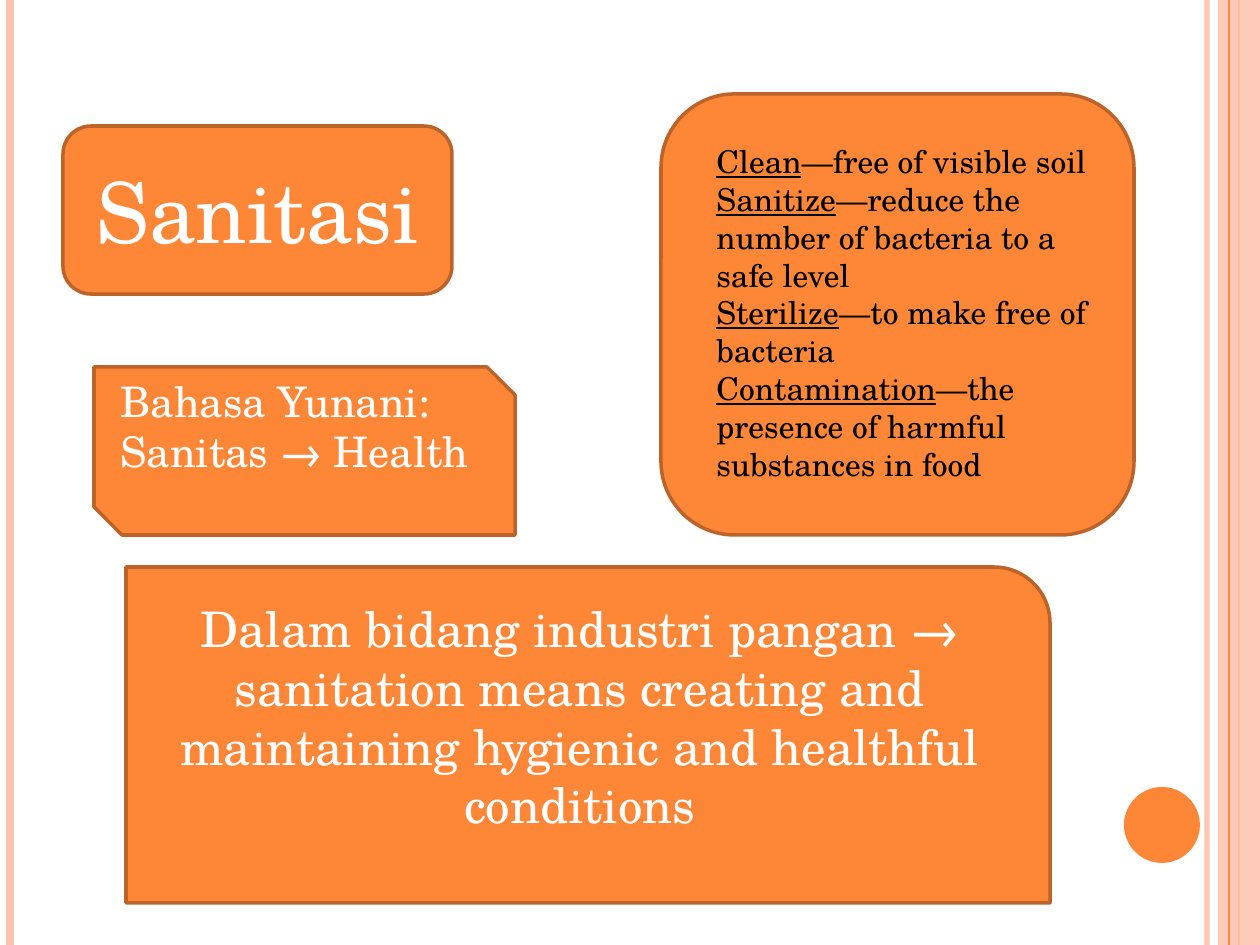
"""Build the sanitation definitions slide."""
from dataclasses import dataclass

from lxml.etree import SubElement
from pptx import Presentation
from pptx.dml.color import RGBColor
from pptx.enum.shapes import MSO_CONNECTOR, MSO_SHAPE as Preset
from pptx.enum.text import MSO_ANCHOR as Anchor, MSO_AUTO_SIZE, PP_ALIGN as Align
from pptx.oxml.ns import qn
from pptx.util import Emu, Pt

EMU_PER_PX = 914400 / 126
SLIDE_W, SLIDE_H = 1260, 945
FONT = "TeX Gyre Schola"
ORANGE, PEACH, BROWN = "FE8637", "FEC3AE", "BC6329"
WHITE, BLACK = "FFFFFF", "000000"


@dataclass(frozen=True)
class Box:
    left: int
    top: int
    width: int
    height: int


@dataclass(frozen=True)
class Stripe:
    x: int
    color: str
    weight: float
    opacity: int = 100


@dataclass(frozen=True)
class Card:
    preset: Preset
    box: Box
    text: str = ""
    size: int = 18
    align: Align = Align.CENTER
    bottom_inset: int = 6


LEFT_STRIPES = [Stripe(1207, PEACH, 3, 93), Stripe(10, PEACH, 4.5), Stripe(1239, ORANGE, 1.5)]
BAND_STRIPE = Stripe(1229, ORANGE, 0.75)
BAND = Box(1218, 0, 42, SLIDE_H)
DOT = Box(1124, 787, 76, 76)

CARDS = [
    Card(Preset.FLOWCHART_ALTERNATE_PROCESS, Box(63, 126, 389, 168), "Sanitasi", 48),
    Card(Preset.SNIP_2_DIAG_RECTANGLE, Box(94, 367, 421, 168),
         "Bahasa Yunani: Sanitas → Health", 24, Align.LEFT, 57),
    Card(Preset.ROUND_1_RECTANGLE, Box(126, 567, 924, 336),
         "Dalam bidang industri pangan → sanitation means creating and "
         "maintaining hygienic and healthful conditions", 28, Align.CENTER, 44),
    Card(Preset.ROUNDED_RECTANGLE, Box(661, 94, 473, 441)),
]
DEFINITIONS_BOX = Box(704, 136, 410, 394)
DEFINITIONS = {
    "Clean": "free of visible soil",
    "Sanitize": "reduce the number of bacteria to a safe level",
    "Sterilize": "to make free of bacteria",
    "Contamination": "the presence of harmful substances in food",
}


def px(length: int) -> Emu:
    """Turn pixels into EMU."""
    return Emu(round(length * EMU_PER_PX))


def place(box: Box) -> tuple:
    """Give the box as left, top, width and height in EMU."""
    return px(box.left), px(box.top), px(box.width), px(box.height)


def rgb(color: str) -> RGBColor:
    """Turn a hex string into a colour."""
    return RGBColor.from_string(color)


def set_opacity(element, percent: int) -> None:
    """Make the first solid colour inside the element translucent."""
    color = next(element.iter(qn("a:srgbClr")))
    SubElement(color, qn("a:alpha"), val=str(percent * 1000))


def set_font(paragraph, size: int, color: str) -> None:
    """Set the font shared by all runs of a paragraph."""
    paragraph.font.name = FONT
    paragraph.font.size = Pt(size)
    paragraph.font.color.rgb = rgb(color)


def draw_stripe(slide, stripe: Stripe) -> None:
    """Draw a full-height vertical line."""
    line = slide.shapes.add_connector(
        MSO_CONNECTOR.STRAIGHT, px(stripe.x), 0, px(stripe.x), px(SLIDE_H))
    line.line.color.rgb = rgb(stripe.color)
    line.line.width = Pt(stripe.weight)
    properties = line._element.spPr
    if stripe.opacity < 100:
        set_opacity(properties, stripe.opacity)
    SubElement(properties, qn("a:effectLst"))


def draw_shape(slide, preset: Preset, box: Box, fill: str):
    """Draw a flat filled shape without an outline."""
    shape = slide.shapes.add_shape(preset, *place(box))
    shape.shadow.inherit = False
    shape.fill.solid()
    shape.fill.fore_color.rgb = rgb(fill)
    shape.line.fill.background()
    return shape


def draw_card(slide, card: Card) -> None:
    """Draw an outlined card and its text."""
    shape = draw_shape(slide, card.preset, card.box, ORANGE)
    shape.line.color.rgb = rgb(BROWN)
    shape.line.width = Pt(2)
    if card.text:
        frame = shape.text_frame
        frame.word_wrap = True
        frame.vertical_anchor = Anchor.MIDDLE
        frame.margin_bottom = px(card.bottom_inset)
        paragraph = frame.paragraphs[0]
        paragraph.text = card.text
        paragraph.alignment = card.align
        set_font(paragraph, card.size, WHITE)


def draw_definitions(slide) -> None:
    """Write each underlined term with its meaning."""
    frame = slide.shapes.add_textbox(*place(DEFINITIONS_BOX)).text_frame
    frame.word_wrap = True
    frame.auto_size = MSO_AUTO_SIZE.SHAPE_TO_FIT_TEXT
    for index, (term, meaning) in enumerate(DEFINITIONS.items()):
        paragraph = frame.add_paragraph() if index else frame.paragraphs[0]
        set_font(paragraph, 18, BLACK)
        term_run = paragraph.add_run()
        term_run.text = term
        term_run.font.underline = True
        paragraph.add_run().text = f"—{meaning}"


def main() -> None:
    """Build and save the slide."""
    deck = Presentation()
    deck.slide_width, deck.slide_height = px(SLIDE_W), px(SLIDE_H)
    slide = deck.slides.add_slide(deck.slide_layouts[6])
    for stripe in LEFT_STRIPES:
        draw_stripe(slide, stripe)
    band = draw_shape(slide, Preset.RECTANGLE, BAND, PEACH)
    set_opacity(band._element.spPr, 87)
    draw_stripe(slide, BAND_STRIPE)
    draw_shape(slide, Preset.OVAL, DOT, ORANGE)
    for card in CARDS:
        draw_card(slide, card)
    draw_definitions(slide)
    deck.save("out.pptx")


if __name__ == "__main__":
    main()
